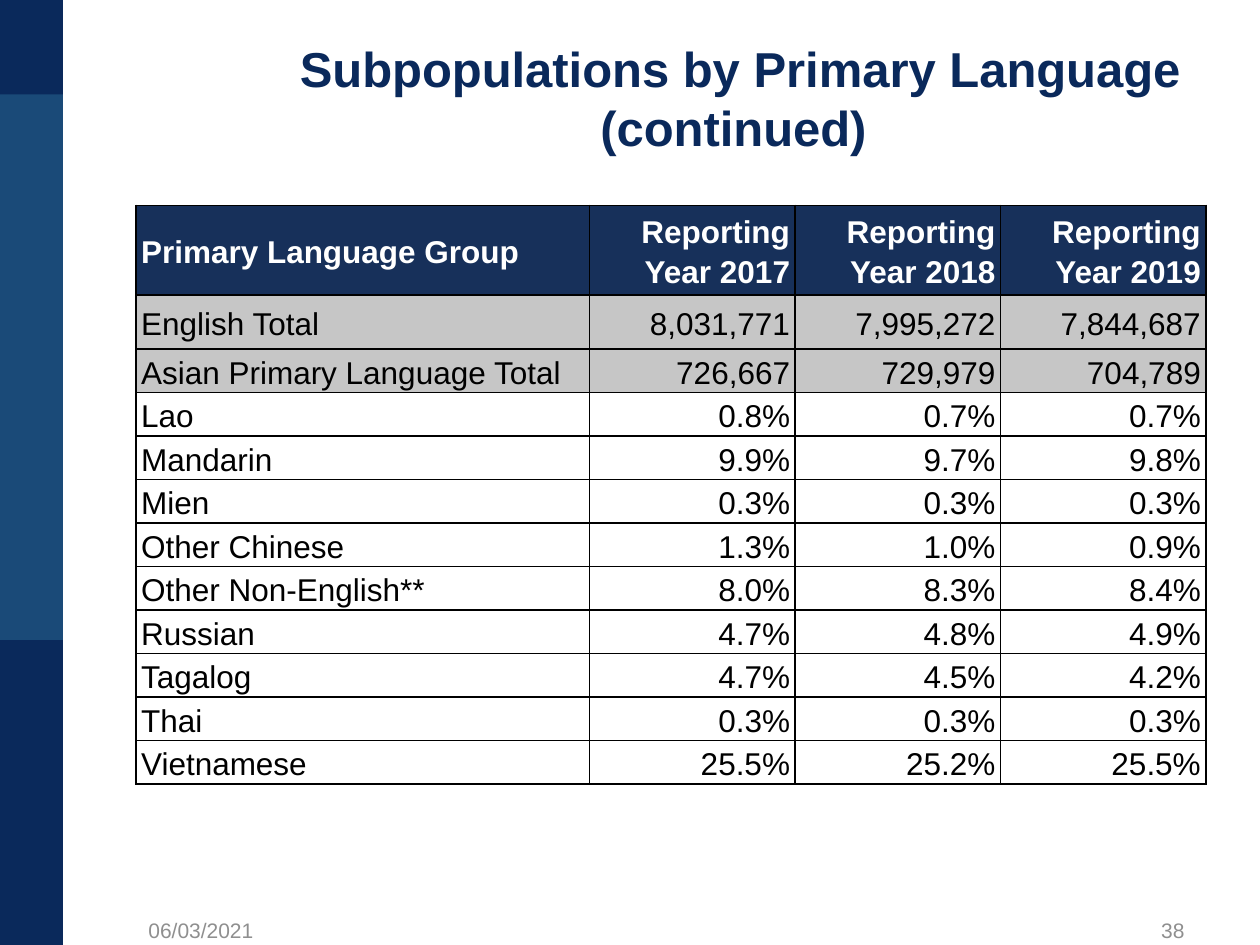
from pptx import Presentation
from pptx.dml.color import RGBColor
from pptx.enum.shapes import MSO_SHAPE
from pptx.enum.text import MSO_ANCHOR, PP_ALIGN
from pptx.oxml import parse_xml
from pptx.oxml.ns import nsdecls
from pptx.util import Inches, Pt

NAVY = RGBColor(0x0A, 0x29, 0x5B)
BLUE = RGBColor(0x1A, 0x4A, 0x78)
HEAD = RGBColor(0x17, 0x30, 0x5A)
SILVER = RGBColor(0xC6, 0xC6, 0xC6)
GRAY = RGBColor(0x8F, 0x8F, 0x8F)
WHITE = RGBColor(0xFF, 0xFF, 0xFF)
BLACK = RGBColor(0, 0, 0)


def write(frame, text, size=18, color=BLACK, bold=False, align=PP_ALIGN.LEFT, space=1.0):
    frame.word_wrap = True
    par = frame.paragraphs[0]
    par.alignment = align
    par.line_spacing = space
    run = par.add_run()
    run.text = text
    run.font.name = "Arial"
    run.font.size = Pt(size)
    run.font.bold = bold
    run.font.color.rgb = color


deck = Presentation()
deck.slide_width = Inches(10)
deck.slide_height = Inches(7.5)
slide = deck.slides.add_slide(deck.slide_layouts[6])

for top, height, color in [(0, 7.5, BLUE), (0, 0.75, NAVY), (5.08, 2.42, NAVY)]:
    bar = slide.shapes.add_shape(MSO_SHAPE.RECTANGLE, 0, Inches(top), Inches(0.5), Inches(height))
    bar.shadow.inherit = False
    bar.fill.solid()
    bar.fill.fore_color.rgb = color
    bar.line.fill.background()

labels = [
    ("Subpopulations by Primary Language (continued) ", (2, 0.55, 7.75, 0.45),
     dict(size=28, color=NAVY, bold=True, align=PP_ALIGN.CENTER)),
    ("06/03/2021", (1.08, 7.18, 2.33, 0.4), dict(size=12, color=GRAY)),
    ("38", (7.17, 7.18, 2.33, 0.4), dict(size=12, color=GRAY, align=PP_ALIGN.RIGHT)),
]
for text, place, style in labels:
    box = slide.shapes.add_textbox(*[Inches(n) for n in place])
    box.text_frame.vertical_anchor = MSO_ANCHOR.MIDDLE
    write(box.text_frame, text, **style)

rows = [
    ("Primary Language Group", "Reporting Year 2017", "Reporting Year 2018", "Reporting Year 2019"),
    ("English Total", "8,031,771", "7,995,272", "7,844,687"),
    ("Asian Primary Language Total", "726,667", "729,979", "704,789"),
    ("Lao", "0.8%", "0.7%", "0.7%"),
    ("Mandarin", "9.9%", "9.7%", "9.8%"),
    ("Mien", "0.3%", "0.3%", "0.3%"),
    ("Other Chinese", "1.3%", "1.0%", "0.9%"),
    ("Other Non-English**", "8.0%", "8.3%", "8.4%"),
    ("Russian", "4.7%", "4.8%", "4.9%"),
    ("Tagalog", "4.7%", "4.5%", "4.2%"),
    ("Thai", "0.3%", "0.3%", "0.3%"),
    ("Vietnamese", "25.5%", "25.2%", "25.5%"),
]
wides = [3.6] + [1.63] * 3
highs = [0.71, 0.43] + [0.34] * 10
fills = [HEAD] + [SILVER] * 2 + [WHITE] * 9

grid = slide.shapes.add_table(len(rows), len(wides), Inches(1.08), Inches(1.63),
                              Inches(sum(wides)), Inches(sum(highs))).table
for col, wide in zip(grid.columns, wides):
    col.width = Inches(wide)
for r, (row, high, fill) in enumerate(zip(rows, highs, fills)):
    grid.rows[r].height = Inches(high)
    for c, text in enumerate(row):
        cell = grid.cell(r, c)
        cell.vertical_anchor = MSO_ANCHOR.MIDDLE
        cell.margin_left = cell.margin_right = Inches(0.04)
        cell.margin_top = cell.margin_bottom = 0
        write(cell.text_frame, text, color=BLACK if r else WHITE, bold=r == 0,
              align=PP_ALIGN.RIGHT if c else PP_ALIGN.LEFT, space=1.15)
        props = cell._tc.get_or_add_tcPr()
        for side in ("lnL", "lnR", "lnT", "lnB"):
            props.append(parse_xml(
                f'<a:{side} {nsdecls("a")} w="12700"><a:solidFill>'
                f'<a:srgbClr val="{BLACK}"/></a:solidFill></a:{side}>'))
        cell.fill.solid()
        cell.fill.fore_color.rgb = fill

deck.save("out.pptx")
